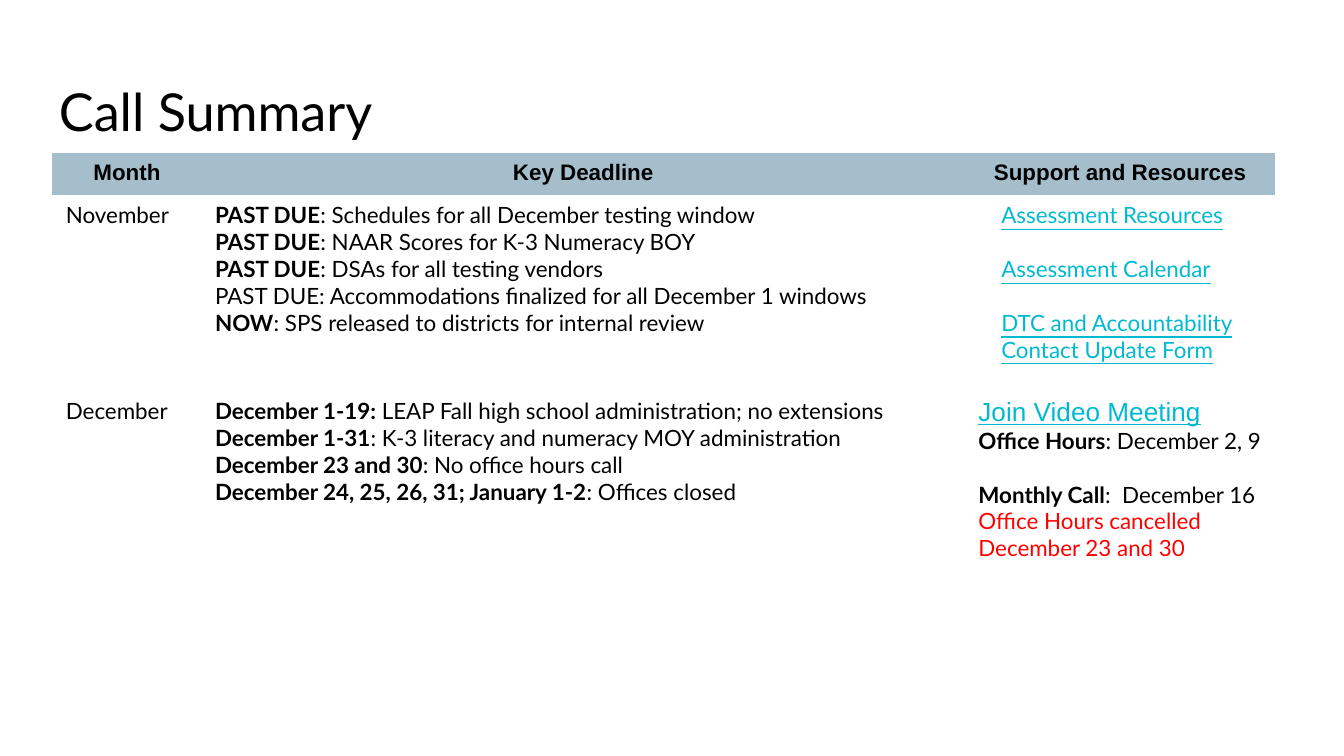
from lxml import etree
from pptx import Presentation
from pptx.dml.color import RGBColor
from pptx.enum.text import PP_ALIGN
from pptx.oxml.ns import qn
from pptx.util import Inches, Pt

BLACK, CYAN, RED, HEADER = "000000", "00BAD2", "FF0000", "A4BECC"
LINE = 14.4
COLS = [1.11, 5.68, 2.31]
ROWS = [0.31, 1.46, 1.65]
HEADINGS = ["Month", "Key Deadline", "Support and Resources"]
NOVEMBER = [
    ("PAST DUE", ": Schedules for all December testing window"),
    ("PAST DUE", ": NAAR Scores for K-3 Numeracy BOY"),
    ("PAST DUE", ": DSAs for all testing vendors"),
    ("", "PAST DUE: Accommodations finalized for all December 1 windows"),
    ("NOW", ": SPS released to districts for internal review"),
]
DECEMBER = [
    ("December 1-19: ", "LEAP Fall high school administration; no extensions"),
    ("December 1-31", ": K-3 literacy and numeracy MOY administration"),
    ("December 23 and 30", ": No office hours call"),
    ("December 24, 25, 26, 31; January 1-2", ": Offices closed"),
]
RESOURCES = ["Assessment Resources", "Assessment Calendar",
             "DTC and Accountability Contact Update Form"]


def rgb(value):
    return RGBColor.from_string(value)


def add_run(p, text, size=12, font="Lato", color=BLACK, bold=False, underline=False):
    r = p.add_run()
    r.text = text
    r.font.size, r.font.name = Pt(size), font
    r.font.bold, r.font.underline = bold, underline
    r.font.color.rgb = rgb(color)


def next_paragraph(tf, before=0):
    p = tf.paragraphs[0]
    if p.runs:
        p = tf.add_paragraph()
        p.space_before = Pt(before)
    return p


def add_entry(tf, label, text, before=0):
    p = next_paragraph(tf, before)
    if label:
        add_run(p, label, bold=True)
    add_run(p, text)


def clear_borders(cell):
    tcPr = cell._tc.get_or_add_tcPr()
    for i, side in enumerate(("lnL", "lnR", "lnT", "lnB")):
        ln = etree.Element(qn("a:" + side))
        etree.SubElement(ln, qn("a:noFill"))
        tcPr.insert(i, ln)


def add_title(s, x, y, w, h):
    tf = s.shapes.add_textbox(Inches(x), Inches(y), Inches(w), Inches(h)).text_frame
    tf.word_wrap = True
    tf.margin_top = tf.margin_bottom = Inches(0.1)
    add_run(tf.paragraphs[0], "Call Summary", size=28)


def fill_resources(tf):
    for text in RESOURCES:
        p = next_paragraph(tf, LINE)
        p._p.get_or_add_pPr().set("marL", str(Inches(0.17)))
        add_run(p, text, color=CYAN, underline=True)


def fill_meetings(tf):
    add_run(next_paragraph(tf), "Join Video Meeting", size=14, font="Arial",
            color=CYAN, underline=True)
    add_entry(tf, "Office Hours", ": December 2, 9")
    add_entry(tf, "Monthly Call", ":  December 16", LINE)
    add_run(next_paragraph(tf), "Office Hours cancelled December 23 and 30", color=RED)


def add_schedule(s, x, y, w, h):
    table = s.shapes.add_table(len(ROWS), len(COLS), Inches(x), Inches(y),
                               Inches(w), Inches(h)).table
    table.first_row = table.horz_banding = False
    for column, width in zip(table.columns, COLS):
        column.width = Inches(width)
    for row, height in zip(table.rows, ROWS):
        row.height = Inches(height)
    for cell in table.iter_cells():
        cell.margin_right = Inches(0.08)
        cell.fill.background()
        clear_borders(cell)

    for cell, heading in zip(table.rows[0].cells, HEADINGS):
        cell.fill.solid()
        cell.fill.fore_color.rgb = rgb(HEADER)
        cell.margin_right = Inches(0.1)
        p = cell.text_frame.paragraphs[0]
        p.alignment = PP_ALIGN.CENTER
        add_run(p, heading, font="Arial", bold=True)

    months = [("November", NOVEMBER, fill_resources),
              ("December", DECEMBER, fill_meetings)]
    for i, (month, deadlines, fill_support) in enumerate(months, 1):
        add_entry(table.cell(i, 0).text_frame, "", month)
        for label, text in deadlines:
            add_entry(table.cell(i, 1).text_frame, label, text)
        fill_support(table.cell(i, 2).text_frame)


def main():
    prs = Presentation()
    prs.slide_width = Inches(10)
    prs.slide_height = prs.slide_width * 9 // 16
    s = prs.slides.add_slide(prs.slide_layouts[6])
    add_title(s, 0.34, 0.49, 9.32, 0.63)
    add_schedule(s, 0.39, 1.14, sum(COLS), sum(ROWS))
    prs.save("out.pptx")


if __name__ == "__main__":
    main()
